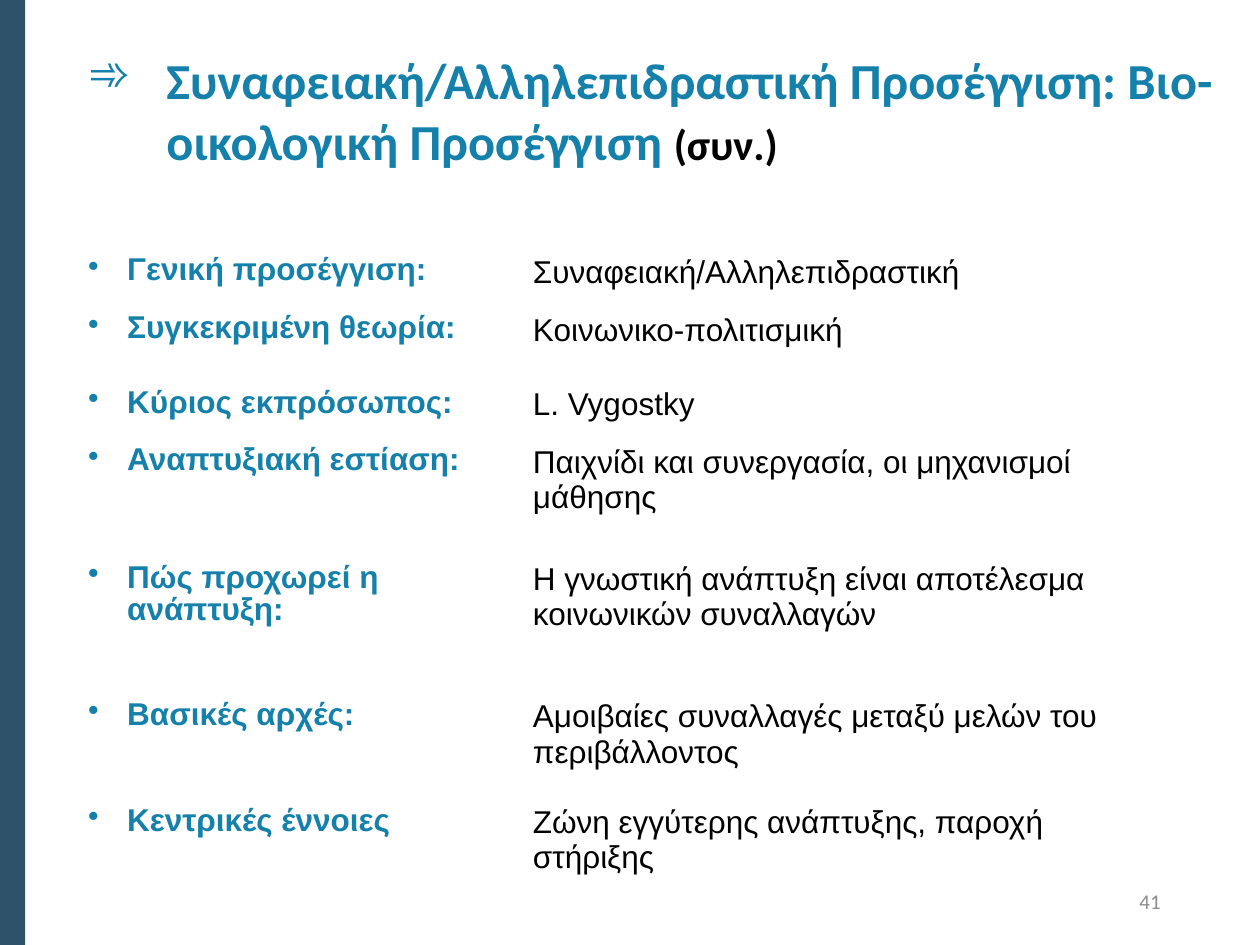
from pptx import Presentation
from pptx.dml.color import RGBColor
from pptx.enum import shapes, text
from pptx.oxml import parse_xml
from pptx.oxml import ns
from pptx.util import Inches, Pt

COLORS = {"bar": "2E5369", "accent": "1581AA", "body": "000000",
          "number": "8C8C8C", "border": "FFFFFF"}
TITLE_FORMAT = {"name": "Calibri", "size": Pt(28.8), "bold": True}
SUFFIX_FORMAT = TITLE_FORMAT | {"size": Pt(24.3)}
LABEL_FORMAT = {"name": "Arial", "size": Pt(18), "bold": True}
VALUE_FORMAT = LABEL_FORMAT | {"bold": False}
NUMBER_FORMAT = {"name": "Calibri", "size": Pt(12)}

COLUMN_WIDTHS = (3.53, 5.21)
ROWS = [
    (0.46, "Γενική προσέγγιση:", "Συναφειακή/Αλληλεπιδραστική"),
    (0.59, "Συγκεκριμένη θεωρία:", "Κοινωνικο-πολιτισμική"),
    (0.46, "Κύριος εκπρόσωπος:", "L. Vygostky"),
    (0.93, "Αναπτυξιακή εστίαση:",
     "Παιχνίδι και συνεργασία, οι μηχανισμοί μάθησης"),
    (1.09, "Πώς προχωρεί η ανάπτυξη:",
     "Η γνωστική ανάπτυξη είναι αποτέλεσμα κοινωνικών συναλλαγών"),
    (0.84, "Βασικές αρχές:",
     "Αμοιβαίες συναλλαγές μεταξύ μελών του περιβάλλοντος"),
    (0.84, "Κεντρικές έννοιες", "Ζώνη εγγύτερης ανάπτυξης, παροχή στήριξης"),
]


def inches(*lengths):
    return [Inches(length) for length in lengths]


def add_span(para, words, formats, color):
    span = para.add_run()
    span.text = words
    for name, value in formats.items():
        setattr(span.font, name, value)
    span.font.color.rgb = RGBColor.from_string(COLORS[color])


def add_bullet(para, mark, indent):
    """Give the paragraph a hanging bullet; call after setting its spacing."""
    props = para._p.get_or_add_pPr()
    props.set("marL", str(Inches(indent)))
    props.set("indent", str(-Inches(indent)))
    props.append(parse_xml(f'<a:buChar {ns.nsdecls("a")} char="{mark}"/>'))


def add_borders(cell):
    """Draw the four cell borders, which must precede the fill."""
    props = cell._tc.get_or_add_tcPr()
    for index, side in enumerate(("lnL", "lnR", "lnT", "lnB")):
        props.insert(index, parse_xml(
            f'<a:{side} {ns.nsdecls("a")} w="{Pt(1)}"><a:solidFill>'
            f'<a:srgbClr val="{COLORS["border"]}"/></a:solidFill></a:{side}>'))


def add_side_bar(page, box):
    bar = page.shapes.add_shape(shapes.MSO_SHAPE.RECTANGLE, *inches(*box))
    bar.shadow.inherit = False
    bar.fill.solid()
    bar.fill.fore_color.rgb = RGBColor.from_string(COLORS["bar"])
    bar.line.fill.background()
    page.shapes._spTree.insert(2, bar._element)


def fill_title(page, box):
    title = page.shapes.title
    title.left, title.top, title.width, title.height = inches(*box)
    frame = title.text_frame
    frame.auto_size = text.MSO_AUTO_SIZE.NONE
    frame.vertical_anchor = text.MSO_ANCHOR.TOP
    para = frame.paragraphs[0]
    para.alignment = text.PP_ALIGN.LEFT
    add_bullet(para, "➾", 0.62)
    add_span(para, "Συναφειακή/Αλληλεπιδραστική Προσέγγιση: "
             "Βιο-οικολογική Προσέγγιση ", TITLE_FORMAT, "accent")
    add_span(para, "(συν.)", SUFFIX_FORMAT, "body")


def add_theory_table(page, box):
    table = page.shapes.add_table(
        len(ROWS), len(COLUMN_WIDTHS), *inches(*box)).table
    table.first_row = table.horz_banding = False
    for column, width in zip(table.columns, COLUMN_WIDTHS):
        column.width = Inches(width)
    for row, (height, label, value) in zip(table.rows, ROWS):
        row.height = Inches(height)
        for cell in row.cells:
            cell.fill.background()
            add_borders(cell)
        label_para, value_para = (
            cell.text_frame.paragraphs[0] for cell in row.cells)
        label_para.line_spacing = 0.93
        add_bullet(label_para, "•", 0.31)
        add_span(label_para, label, LABEL_FORMAT, "accent")
        value_para.space_before = Pt(15)
        add_span(value_para, value, VALUE_FORMAT, "body")


def add_page_number(page, box):
    frame = page.shapes.add_textbox(*inches(*box)).text_frame
    frame.word_wrap = True
    frame.vertical_anchor = text.MSO_ANCHOR.MIDDLE
    para = frame.paragraphs[0]
    para.alignment = text.PP_ALIGN.RIGHT
    add_span(para, "41", NUMBER_FORMAT, "number")


def main():
    deck = Presentation()
    deck.slide_width, deck.slide_height = inches(10, 7.5)
    page = deck.slides.add_slide(deck.slide_layouts.get_by_name("Title Only"))
    add_side_bar(page, (0, 0, 0.2, 7.5))
    fill_title(page, (0.6, 0.34, 9.28, 0.97))
    add_theory_table(page, (0.6, 1.97, 8.74, 5.2))
    add_page_number(page, (7.06, 6.95, 2.25, 0.4))
    deck.save("out.pptx")


if __name__ == "__main__":
    main()
